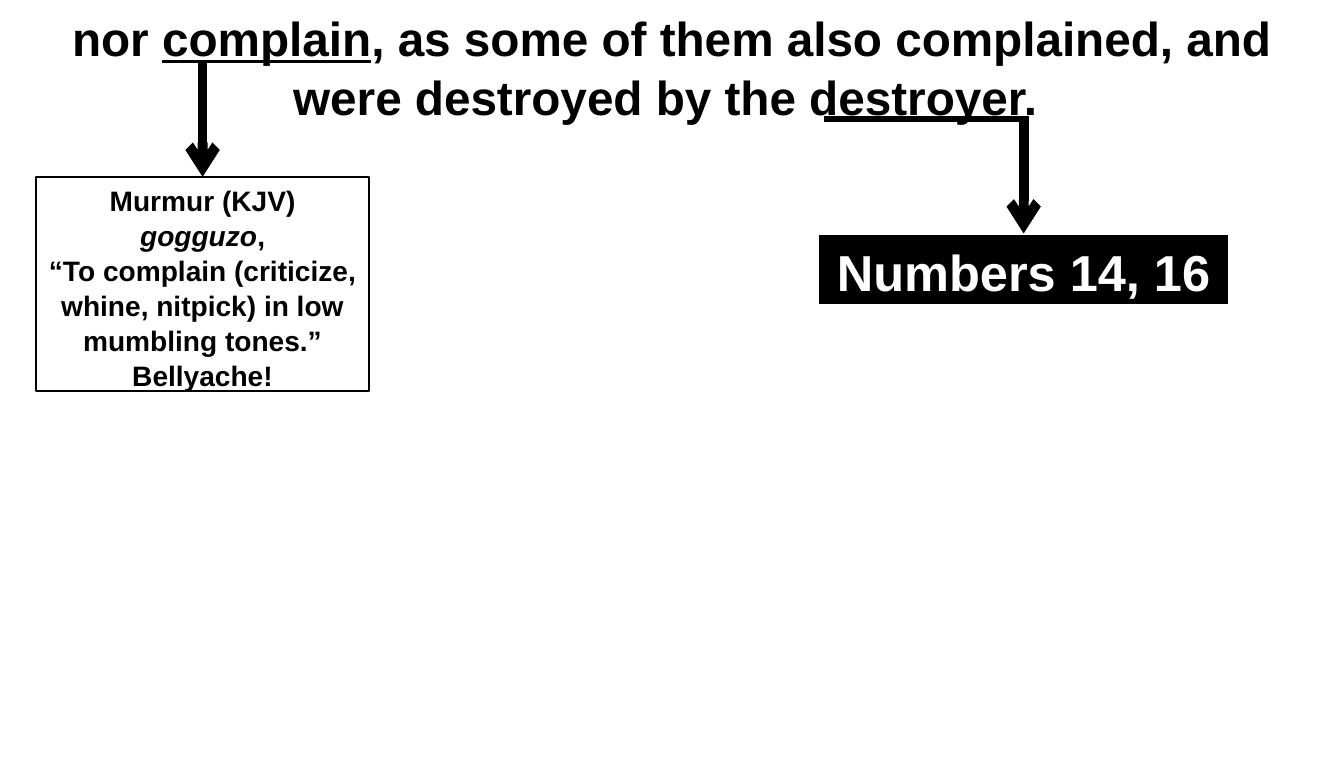
from dataclasses import dataclass
from typing import Any, Optional

import pptx
import pptx.dml.color
import pptx.enum.shapes
import pptx.enum.text
import pptx.oxml
import pptx.oxml.ns
import pptx.util
from pptx.util import Inches


@dataclass(frozen=True)
class Theme:
    black: str = "000000"
    white: str = "FFFFFF"
    font: str = "Arial"
    verse_size: int = 34
    note_size: int = 20
    reference_size: int = 36
    line_spacing: float = 1.04
    arrow_width: float = 7
    underline_width: float = 4.5


@dataclass(frozen=True)
class Run:
    text: str
    italic: bool = False
    underline: bool = False


@dataclass(frozen=True)
class Box:
    left: float
    top: float
    width: float
    height: float
    size: int
    text_color: str
    fill: str
    paragraphs: list[list[Run]]
    opacity: int = 100
    line: Optional[str] = None
    line_width: float = 0

    @property
    def center(self) -> float:
        return self.left + self.width / 2


THEME = Theme()

VERSE = Box(0.36, 0.01, 12.58, 1.25, THEME.verse_size, THEME.black, THEME.white, [[
    Run("nor "),
    Run("complain", underline=True),
    Run(", as some of them also complained, and were destroyed by the destroyer. "),
]], opacity=70)

MURMUR = Box(0.36, 1.75, 3.29, 2.12, THEME.note_size, THEME.black, THEME.white, [
    [Run("Murmur (KJV) "), Run("gogguzo", italic=True), Run(",")],
    [Run("“To complain (criticize, whine, nitpick) in low mumbling tones.” Bellyache!")],
], opacity=70, line=THEME.black, line_width=1.5)

NUMBERS = Box(8.09, 2.31, 4.08, 0.71, THEME.reference_size, THEME.white, THEME.black,
              [[Run("Numbers 14, 16")]], line=THEME.white, line_width=2.25)


def rgb(color: str) -> pptx.dml.color.RGBColor:
    return pptx.dml.color.RGBColor.from_string(color)


def add_child(parent: Any, tag: str, **attributes: str) -> None:
    child = pptx.oxml.parse_xml(f"<a:{tag} {pptx.oxml.ns.nsdecls('a')}/>")
    for name, value in attributes.items():
        child.set(name, value)
    parent.append(child)


def set_attributes(target: Any, formats: dict[str, Any]) -> None:
    for name, value in formats.items():
        setattr(target, name, value)


def format_box(shape: Any, box: Box) -> None:
    set_attributes(shape, {"left": Inches(box.left), "top": Inches(box.top),
                           "width": Inches(box.width), "height": Inches(box.height)})
    # Fill and outline
    shape.fill.solid()
    shape.fill.fore_color.rgb = rgb(box.fill)
    if box.opacity < 100:
        color = shape.fill._xPr.find(".//" + pptx.oxml.ns.qn("a:srgbClr"))
        add_child(color, "alpha", val=str(box.opacity * 1000))
    if box.line:
        shape.line.color.rgb = rgb(box.line)
        shape.line.width = pptx.util.Pt(box.line_width)
    else:
        shape.line.fill.background()
    # Text
    frame = shape.text_frame
    set_attributes(frame, {
        "word_wrap": True,
        "auto_size": pptx.enum.text.MSO_AUTO_SIZE.SHAPE_TO_FIT_TEXT,
        "vertical_anchor": pptx.enum.text.MSO_ANCHOR.TOP,
    })
    for index, runs in enumerate(box.paragraphs):
        paragraph = frame.add_paragraph() if index else frame.paragraphs[0]
        set_attributes(paragraph, {"alignment": pptx.enum.text.PP_ALIGN.CENTER,
                                   "line_spacing": THEME.line_spacing})
        for item in runs:
            run = paragraph.add_run()
            run.text = item.text
            set_attributes(run.font, {
                "name": THEME.font, "size": pptx.util.Pt(box.size), "bold": True,
                "italic": item.italic, "underline": item.underline,
            })
            run.font.color.rgb = rgb(box.text_color)


def add_box(slide: Any, box: Box) -> Any:
    shape = slide.shapes.add_shape(
        pptx.enum.shapes.MSO_SHAPE.RECTANGLE, Inches(box.left), Inches(box.top),
        Inches(box.width), Inches(box.height))
    shape.shadow.inherit = False
    format_box(shape, box)
    return shape


def add_line(slide: Any, start: tuple[float, float], end: tuple[float, float],
             width: float) -> Any:
    line = slide.shapes.add_connector(
        pptx.enum.shapes.MSO_CONNECTOR.STRAIGHT,
        *(Inches(value) for value in (*start, *end)))
    line.line.color.rgb = rgb(THEME.black)
    line.line.width = pptx.util.Pt(width)
    add_child(line._element.spPr, "effectLst")
    return line


def add_arrow(slide: Any, start_y: float, box: Box, shape: Any) -> None:
    arrow = add_line(slide, (box.center, start_y), (box.center, box.top), THEME.arrow_width)
    add_child(arrow.line._get_or_add_ln(), "tailEnd", type="arrow")
    arrow.end_connect(shape, 0)


def main() -> None:
    presentation = pptx.Presentation()
    set_attributes(presentation, {"slide_width": Inches(13.3), "slide_height": Inches(7.5)})
    slide = presentation.slides.add_slide(presentation.slide_layouts[5])

    # Verse and the notes below it
    format_box(slide.shapes.title, VERSE)
    numbers = add_box(slide, NUMBERS)
    murmur = add_box(slide, MURMUR)

    # Lines from the words to their notes
    underline_y = 1.18
    add_arrow(slide, 0.61, MURMUR, murmur)
    add_line(slide, (8.15, underline_y), (NUMBERS.center + 0.05, underline_y),
             THEME.underline_width)
    add_arrow(slide, underline_y, NUMBERS, numbers)

    presentation.save("out.pptx")


if __name__ == "__main__":
    main()
